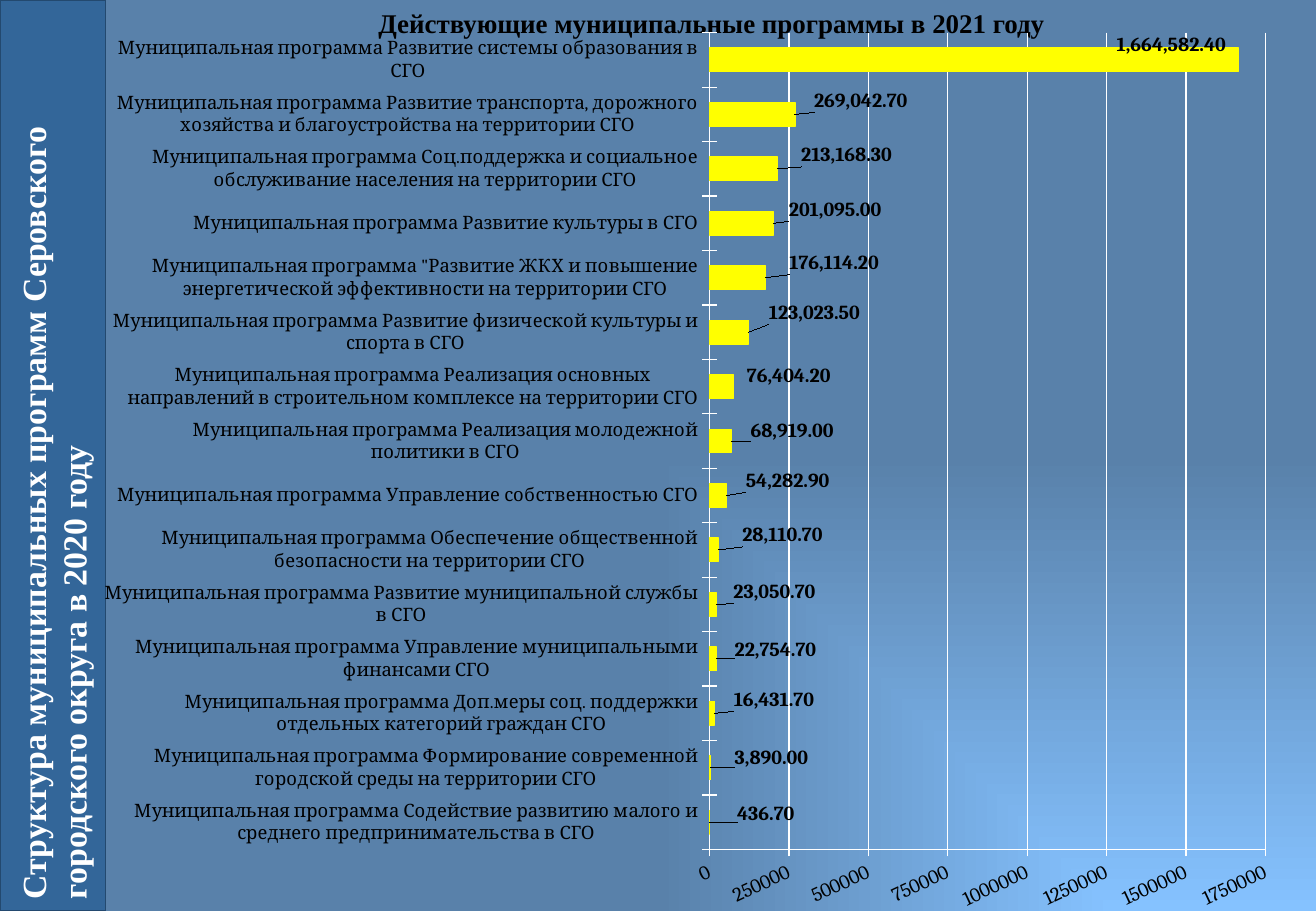
from copy import deepcopy
from dataclasses import dataclass

from pptx import Presentation
from pptx.chart.data import CategoryChartData
from pptx.dml.color import RGBColor
from pptx.enum.chart import XL_CHART_TYPE, XL_LABEL_POSITION, XL_TICK_MARK
from pptx.enum.shapes import MSO_SHAPE
from pptx.enum.text import MSO_ANCHOR, PP_ALIGN
from pptx.oxml import parse_xml
from pptx.oxml.ns import nsdecls, qn
from pptx.util import Inches, Pt


@dataclass(frozen=True)
class Theme:
    """Colours, fonts and type sizes of the slide."""

    black: RGBColor = RGBColor.from_string("000000")
    white: RGBColor = RGBColor.from_string("FFFFFF")
    bar: RGBColor = RGBColor.from_string("FFFF00")
    glow: RGBColor = RGBColor.from_string("85C2FF")
    backdrop: RGBColor = RGBColor.from_string("5981AA")
    sidebar: RGBColor = RGBColor.from_string("336699")
    sidebar_edge: RGBColor = RGBColor.from_string("23496F")
    heading_font: str = "Times New Roman"
    chart_font: str = "Cambria"
    title_size: int = 16
    sidebar_size: int = 20
    chart_size: int = 10
    category_size: int = 11
    value_size: int = 12


THEME = Theme()
PREFIX = "Муниципальная программа "
PROGRAMMES = [
    ("Содействие развитию малого и среднего предпринимательства в СГО", 436.7, (0.19, -0.07)),
    ("Формирование современной городской среды на территории СГО", 3890, (0.16, -0.08)),
    ("Доп.меры соц. поддержки отдельных категорий граждан СГО", 16431.7, (0.12, -0.11)),
    ("Управление муниципальными финансами СГО", 22754.7, (0.11, -0.07)),
    ("Развитие муниципальной службы в СГО", 23050.7, (0.1, -0.1)),
    ("Обеспечение общественной безопасности на территории СГО", 28110.7, (0.16, -0.12)),
    ("Управление собственностью СГО", 54282.9, (0.12, -0.12)),
    ("Реализация молодежной политики в СГО", 68919, (0.12, -0.08)),
    ("Реализация основных направлений в строительном комплексе на территории СГО",
     76404.2, (0.07, -0.09)),
    ("Развитие физической культуры и спорта в СГО", 123023.5, (0.13, -0.16)),
    ('"Развитие ЖКХ и повышение энергетической эффективности на территории СГО',
     176114.2, (0.16, -0.12)),
    ("Развитие культуры в СГО", 201095, (0.09, -0.11)),
    ("Соц.поддержка и социальное обслуживание населения на территории СГО",
     213168.3, (0.16, -0.11)),
    ("Развитие транспорта, дорожного хозяйства и благоустройства на территории СГО",
     269042.7, (0.12, -0.11)),
    ("Развитие системы образования в СГО", 1664582.4, (-1.05, -0.12)),
]


def style_font(font, name, size, color, bold=False):
    """Apply typeface, size, colour and weight to a font."""
    font.name, font.size, font.bold = name, Pt(size), bold
    font.color.rgb = color


def paint_background(slide):
    """Fill the slide with a gradient that glows from the lower right corner."""
    fill = slide.background.fill
    fill.gradient()
    for stop, color in zip(fill.gradient_stops, (THEME.glow, THEME.backdrop)):
        stop.color.rgb = color
    gradient = slide.element.find(".//" + qn("a:gradFill"))
    gradient.replace(gradient.find(qn("a:lin")), parse_xml(
        f'<a:path {nsdecls("a")} path="rect"><a:fillToRect l="100000" t="100000"/></a:path>'))


def place_title(slide, box):
    """Put the chart heading in the title placeholder."""
    title = slide.shapes.title
    title.left, title.top, title.width, title.height = map(Inches, box)
    frame = title.text_frame
    frame.text = "Действующие муниципальные программы в 2021 году"
    frame.word_wrap = True
    frame.vertical_anchor = MSO_ANCHOR.TOP
    paragraph = frame.paragraphs[0]
    paragraph.alignment = PP_ALIGN.CENTER
    style_font(paragraph.font, THEME.heading_font, THEME.title_size, THEME.black, True)


def add_sidebar(slide, box):
    """Add the band with upward text that fills an upright box."""
    left, top, width, height = box
    shift = (height - width) / 2
    sidebar = slide.shapes.add_shape(
        MSO_SHAPE.RECTANGLE, Inches(left - shift), Inches(top + shift),
        Inches(height), Inches(width))
    sidebar.rotation = 270
    sidebar.shadow.inherit = False
    sidebar.fill.solid()
    sidebar.fill.fore_color.rgb = THEME.sidebar
    sidebar.line.color.rgb = THEME.sidebar_edge
    sidebar.line.width = Pt(1)
    frame = sidebar.text_frame
    frame.text = "Структура муниципальных программ Серовского городского округа в 2020 году"
    frame.word_wrap = True
    frame.vertical_anchor = MSO_ANCHOR.MIDDLE
    paragraph = frame.paragraphs[0]
    paragraph.alignment = PP_ALIGN.LEFT
    style_font(paragraph.font, THEME.heading_font, THEME.sidebar_size, THEME.white, True)


def manual_layout(settings):
    """Return a chart layout element with the given settings."""
    items = "".join(f'<c:{name} val="{value}"/>' for name, value in settings)
    return parse_xml(f'<c:layout {nsdecls("c")}><c:manualLayout>{items}</c:manualLayout></c:layout>')


def place_plot(chart, box, size):
    """Set the inner plot area to a box inside a chart of the given size."""
    width, height = size
    fractions = [box[0] / width, box[1] / height, box[2] / width, box[3] / height]
    plot_area = chart.element.find(".//" + qn("c:plotArea"))
    for layout in plot_area.findall(qn("c:layout")):
        plot_area.remove(layout)
    plot_area.insert(0, manual_layout(
        [("layoutTarget", "inner"), ("xMode", "edge"), ("yMode", "edge"),
         *zip("xywh", fractions)]))


def style_axes(chart):
    """Format both axes, the gridlines and the slanted value labels."""
    sizes = (THEME.category_size, THEME.value_size)
    for axis, size in zip((chart.category_axis, chart.value_axis), sizes):
        axis.major_tick_mark = XL_TICK_MARK.CROSS
        axis.minor_tick_mark = XL_TICK_MARK.NONE
        axis.format.line.color.rgb = THEME.white
        style_font(axis.tick_labels.font, THEME.chart_font, size, THEME.black)
    values = chart.value_axis
    values.minimum_scale, values.maximum_scale, values.major_unit = 0, 1750000, 250000
    values.has_major_gridlines = True
    values.major_gridlines.format.line.color.rgb = THEME.white
    values.tick_labels.number_format = "General"
    values.tick_labels.number_format_is_linked = False
    value_axis = chart.element.find(".//" + qn("c:valAx"))
    value_axis.find(".//" + qn("a:bodyPr")).set("rot", "-1500000")


def label_bars(chart, size):
    """Show bold values, each shifted from its bar end by its own offset."""
    labels = chart.plots[0].series[0].data_labels
    labels.show_value = True
    labels.number_format = "#,##0.00"
    labels.number_format_is_linked = False
    labels.position = XL_LABEL_POSITION.OUTSIDE_END
    style_font(labels.font, THEME.chart_font, THEME.value_size, THEME.black, True)
    group = chart.element.find(".//" + qn("c:dLbls"))
    shared = [item for item in group if item.tag != qn("c:showLeaderLines")]
    for index, (_, _, offset) in enumerate(PROGRAMMES):
        label = parse_xml(f'<c:dLbl {nsdecls("c")}><c:idx val="{index}"/></c:dLbl>')
        label.append(manual_layout(
            (name, shift / length) for name, shift, length in zip("xy", offset, size)))
        label.extend(deepcopy(item) for item in shared)
        group.insert(index, label)


def add_programme_chart(slide, box):
    """Add the bar chart of programme budgets in the given box."""
    data = CategoryChartData()
    data.categories = [PREFIX + name for name, _, _ in PROGRAMMES]
    data.add_series("Series 1", [value for _, value, _ in PROGRAMMES])
    chart = slide.shapes.add_chart(
        XL_CHART_TYPE.BAR_CLUSTERED, *map(Inches, box), data).chart
    chart.has_title = False
    chart.has_legend = False
    style_font(chart.font, THEME.chart_font, THEME.chart_size, THEME.white)
    plot = chart.plots[0]
    plot.gap_width = 130
    plot.vary_by_categories = False
    series = plot.series[0]
    series.format.fill.solid()
    series.format.fill.fore_color.rgb = THEME.bar
    series.format.line.color.rgb = THEME.bar
    series.format.line.width = Pt(0.75)
    size = box[2:]
    place_plot(chart, (4.93, 0.02, 4.62, 6.8), size)
    style_axes(chart)
    label_bars(chart, size)


def main():
    """Build and save the slide."""
    presentation = Presentation()
    presentation.slide_width, presentation.slide_height = Inches(10.83), Inches(7.5)
    slide = presentation.slides.add_slide(presentation.slide_layouts[5])
    paint_background(slide)
    place_title(slide, (1.59, 0, 8.53, 0.37))
    add_sidebar(slide, (0, 0, 0.87, 7.5))
    add_programme_chart(slide, (0.86, 0.25, 9.98, 7.25))
    presentation.save("out.pptx")


if __name__ == "__main__":
    main()
